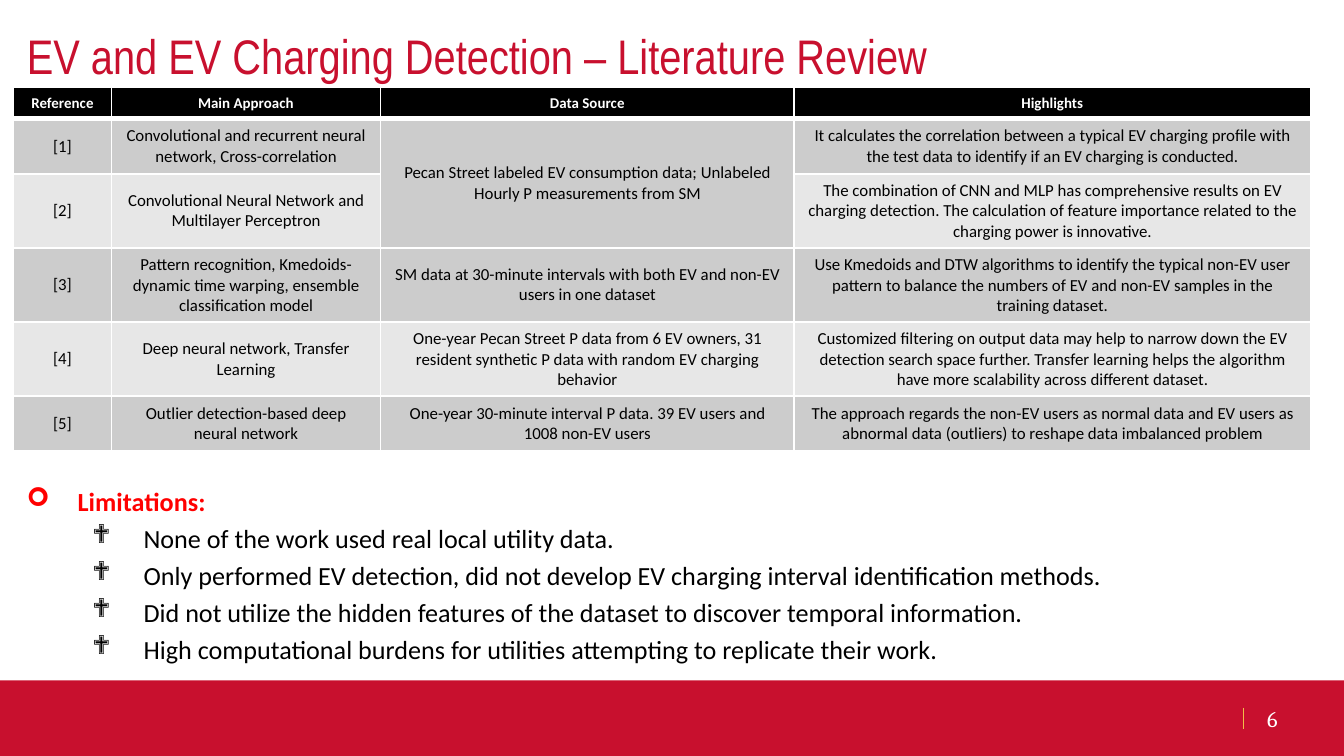
from lxml.etree import SubElement
from pptx import Presentation
from pptx.dml.color import RGBColor
from pptx.enum.shapes import MSO_CONNECTOR, MSO_SHAPE
from pptx.enum.text import MSO_ANCHOR, MSO_AUTO_SIZE, PP_ALIGN
from pptx.oxml.ns import qn
from pptx.util import Inches, Pt

WIDTH = 10
HEIGHT = WIDTH * 9 / 16
MARGIN = 0.1
RED, GOLD, WHITE, BLACK = "C8102E", "F1BE48", "FFFFFF", "000000"
BANDS = ("CCCCCC", "E7E7E7")

COLUMN_WIDTHS = (0.73, 2, 3.08, 3.84)
HEADER_HEIGHT, ROW_HEIGHT = 0.17, 0.41
HEADINGS = ("Reference", "Main Approach", "Data Source", "Highlights")
# An empty data source continues the one above it
STUDIES = (
    ("[1]", "Convolutional and recurrent neural network, Cross-correlation",
     "Pecan Street labeled EV consumption data; Unlabeled Hourly P measurements from SM",
     "It calculates the correlation between a typical EV charging profile with the test data "
     "to identify if an EV charging is conducted."),
    ("[2]", "Convolutional Neural Network and Multilayer Perceptron", "",
     "The combination of CNN and MLP has comprehensive results on EV charging detection. "
     "The calculation of feature importance related to the charging power is innovative."),
    ("[3]", "Pattern recognition, Kmedoids-dynamic time warping, ensemble classification model",
     "SM data at 30-minute intervals with both EV and non-EV users in one dataset",
     "Use Kmedoids and DTW algorithms to identify the typical non-EV user pattern to balance "
     "the numbers of EV and non-EV samples in the training dataset."),
    ("[4]", "Deep neural network, Transfer Learning",
     "One-year Pecan Street P data from 6 EV owners, 31 resident synthetic P data with random "
     "EV charging behavior",
     "Customized filtering on output data may help to narrow down the EV detection search space "
     "further. Transfer learning helps the algorithm have more scalability across different dataset."),
    ("[5]", "Outlier detection-based deep neural network",
     "One-year 30-minute interval P data. 39 EV users and 1008 non-EV users",
     "The approach regards the non-EV users as normal data and EV users as abnormal data "
     "(outliers) to reshape data imbalanced problem"),
)
LIMITATIONS = (
    "None of the work used real local utility data.",
    "Only performed EV detection, did not develop EV charging interval identification methods.",
    "Did not utilize the hidden features of the dataset to discover temporal information.",
    "High computational burdens for utilities attempting to replicate their work.",
)


def rgb(color):
    return RGBColor.from_string(color)


def inches(*lengths):
    return [Inches(length) for length in lengths]


def style(paragraph, name, size, color, bold=False):
    font = paragraph.font
    font.name, font.size, font.bold = name, Pt(size), bold
    font.color.rgb = rgb(color)


def add_bullet(paragraph, symbol, indent, hanging):
    properties = paragraph._p.get_or_add_pPr()
    properties.set("marL", str(Inches(indent)))
    properties.set("indent", str(-Inches(hanging)))
    SubElement(properties, qn("a:buFont"), typeface="Wingdings")
    SubElement(properties, qn("a:buChar"), char=symbol)


def add_borders(cell, top, bottom):
    properties = cell._tc.get_or_add_tcPr()
    for side, points in (("L", 1), ("R", 1), ("T", top), ("B", bottom)):
        border = SubElement(properties, qn(f"a:ln{side}"), w=str(Pt(points)))
        SubElement(SubElement(border, qn("a:solidFill")), qn("a:srgbClr"), val=WHITE)


def add_footer(slide, box, number):
    left, top, width, height = box
    band = slide.shapes.add_shape(MSO_SHAPE.RECTANGLE, *inches(*box))
    band.shadow.inherit = False
    band.fill.solid()
    band.fill.fore_color.rgb = rgb(RED)
    band.line.fill.background()

    # Divider beside the page number
    x = left + 0.925 * width
    divider = slide.shapes.add_connector(
        MSO_CONNECTOR.STRAIGHT, *inches(x, top + 0.36 * height, x, top + 0.65 * height))
    divider.line.color.rgb = rgb(GOLD)
    divider.line.width = Pt(0.75)
    SubElement(divider._element.spPr, qn("a:effectLst"))

    page = slide.shapes.add_textbox(
        *inches(left + 0.933 * width, top + 0.24 * height, 0.058 * width, 0.54 * height))
    page.text_frame.word_wrap = True
    page.text_frame.vertical_anchor = MSO_ANCHOR.MIDDLE
    page.text_frame.text = number
    style(page.text_frame.paragraphs[0], "Cambria", 12, WHITE)


def set_title(slide, box, wording):
    title = slide.shapes.title
    title.left, title.top, title.width, title.height = inches(*box)
    frame = title.text_frame
    frame.text = wording
    frame.auto_size = MSO_AUTO_SIZE.NONE
    frame.vertical_anchor = MSO_ANCHOR.TOP
    frame.paragraphs[0].alignment = PP_ALIGN.LEFT
    style(frame.paragraphs[0], "Arial Narrow", 26, RED)


def add_review_table(slide, box):
    rows = (HEADINGS,) + STUDIES
    table = slide.shapes.add_table(len(rows), len(HEADINGS), *inches(*box)).table
    for column, width in zip(table.columns, COLUMN_WIDTHS):
        column.width = Inches(box[2] * width / sum(COLUMN_WIDTHS))
    for r, row in enumerate(rows):
        is_header = r == 0
        table.rows[r].height = Inches(HEADER_HEIGHT if is_header else ROW_HEIGHT)
        for c, wording in enumerate(row):
            cell = table.cell(r, c)
            add_borders(cell, top=3 if r == 1 else 1, bottom=3 if is_header else 1)
            cell.fill.solid()
            cell.fill.fore_color.rgb = rgb(BLACK if is_header else BANDS[(r - 1) % 2])
            if not wording:
                table.cell(r - 1, c).merge(cell)
                continue
            cell.text = wording
            cell.vertical_anchor = MSO_ANCHOR.MIDDLE
            paragraph = cell.text_frame.paragraphs[0]
            paragraph.alignment = PP_ALIGN.CENTER
            style(paragraph, "Calibri", 8 if is_header else 9,
                  WHITE if is_header else BLACK, is_header)


def add_limitations(slide, box):
    frame = slide.shapes.add_textbox(*inches(*box)).text_frame
    frame.word_wrap = True
    frame.auto_size = MSO_AUTO_SIZE.SHAPE_TO_FIT_TEXT
    heading = frame.paragraphs[0]
    heading.text = "Limitations:"
    add_bullet(heading, "➢", 0.38, 0.38)
    style(heading, "Calibri", 14, "FF0000", True)
    for limitation in LIMITATIONS:
        item = frame.add_paragraph()
        item.text = limitation
        item.level = 1
        item.space_before = Pt(3)
        add_bullet(item, "❖", 0.87, 0.38)
        style(item, "Calibri", 14, BLACK)


def main():
    deck = Presentation()
    deck.slide_width, deck.slide_height = inches(WIDTH, HEIGHT)
    slide = deck.slides.add_slide(deck.slide_layouts[5])
    table_height = HEADER_HEIGHT + ROW_HEIGHT * len(STUDIES)

    add_footer(slide, (0, 0.9 * HEIGHT, WIDTH, 0.1 * HEIGHT), "6")
    set_title(slide, (MARGIN, 0.14, 9.49, 0.51),
              "EV and EV Charging Detection – Literature Review")
    add_review_table(slide, (MARGIN, 0.65, sum(COLUMN_WIDTHS), table_height))
    add_limitations(slide, (MARGIN, 3.56, 9.66, 1.45))
    deck.save("out.pptx")


if __name__ == "__main__":
    main()
